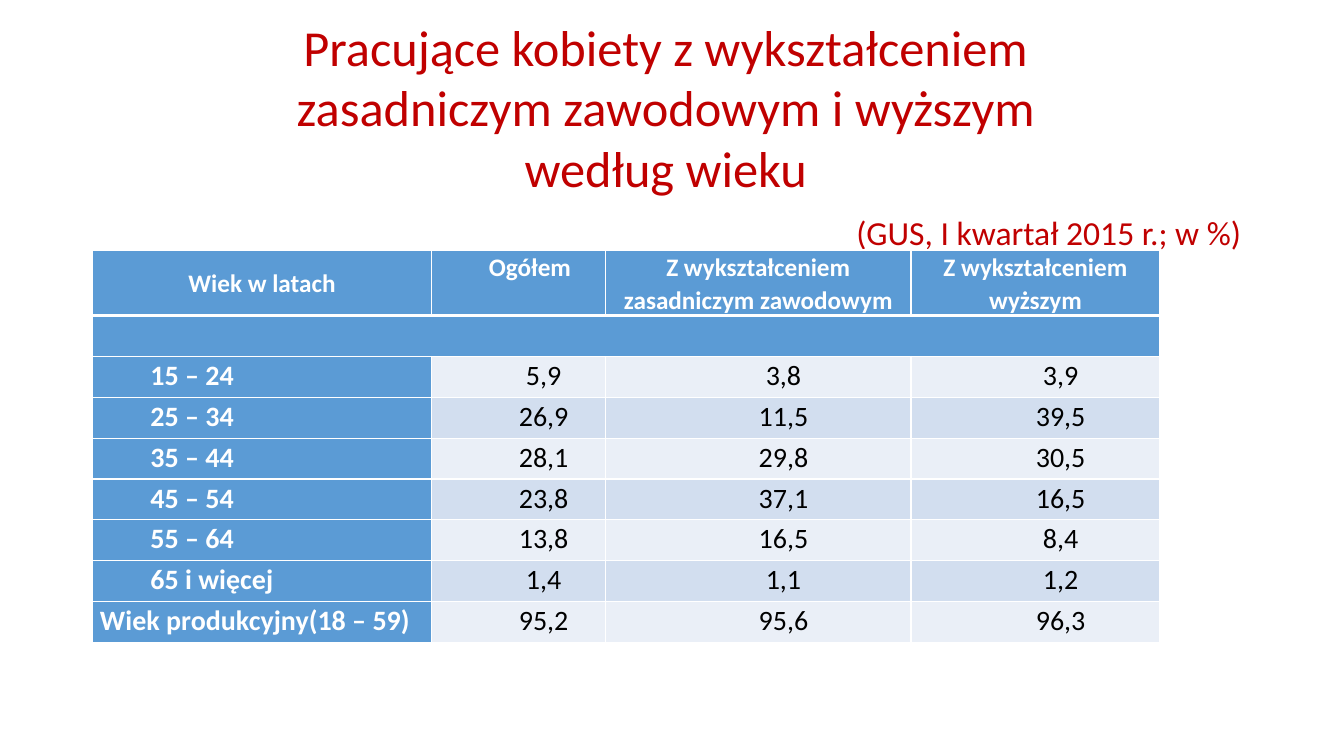
from lxml import etree
from pptx import Presentation
from pptx import util as u
from pptx.dml.color import RGBColor
from pptx.enum import text
from pptx.oxml.ns import qn

FONT = "Calibri"
RED, BLUE, WHITE, BLACK = "C00000", "5B9BD5", "FFFFFF", "000000"
BANDS = ["EAEFF7", "D2DEEF"]
CENTER, LEFT, RIGHT = text.PP_ALIGN.CENTER, text.PP_ALIGN.LEFT, text.PP_ALIGN.RIGHT

TITLE = ("Pracujące kobiety z wykształceniem\v"
         "zasadniczym zawodowym i wyższym\vwedług wieku")
SOURCE = "(GUS, I kwartał 2015 r.; w %)"
HEADERS = ["Wiek w latach", "Ogółem",
           "Z wykształceniem zasadniczym zawodowym", "Z wykształceniem wyższym"]
AGE_ROWS = [
    ["15 – 24", "5,9", "3,8", "3,9"],
    ["25 – 34", "26,9", "11,5", "39,5"],
    ["35 – 44", "28,1", "29,8", "30,5"],
    ["45 – 54", "23,8", "37,1", "16,5"],
    ["55 – 64", "13,8", "16,5", "8,4"],
    ["65 i więcej", "1,4", "1,1", "1,2"],
    ["Wiek produkcyjny(18 – 59)", "95,2", "95,6", "96,3"],
]
COLUMN_WIDTHS = [8.53, 4.39, 7.7, 6.27]
HEADER_HEIGHT, ROW_HEIGHT = 1.65, 1.03


def color(hex_string):
    return RGBColor.from_string(hex_string)


def style_paragraph(paragraph, size, hex_string, align, bold=False):
    paragraph.alignment = align
    for run in paragraph.runs:
        run.font.name = FONT
        run.font.size = u.Pt(size)
        run.font.bold = bold
        run.font.color.rgb = color(hex_string)


def set_borders(cell, top=1, bottom=1):
    properties = cell._tc.get_or_add_tcPr()
    widths = {"a:lnL": 1, "a:lnR": 1, "a:lnT": top, "a:lnB": bottom}
    for position, (tag, width) in enumerate(widths.items()):
        line = etree.Element(qn(tag), w=str(u.Pt(width)))
        fill = etree.SubElement(line, qn("a:solidFill"))
        etree.SubElement(fill, qn("a:srgbClr"), val=WHITE)
        properties.insert(position, line)


def fill_cell(cell, words, fill, size, hex_string, align, bold, indent):
    cell.fill.solid()
    cell.fill.fore_color.rgb = color(fill)
    cell.margin_left = cell.margin_right = u.Cm(0.18)
    cell.margin_top = cell.margin_bottom = 0
    paragraph = cell.text_frame.paragraphs[0]
    paragraph.text = words
    paragraph.line_spacing = 1.07
    if indent:
        paragraph._p.get_or_add_pPr().set("marL", str(u.Cm(1.27)))
    style_paragraph(paragraph, size, hex_string, align, bold)


def add_title(slide, left, top, width, height):
    text_frame = slide.shapes.add_textbox(left, top, width, height).text_frame
    text_frame.word_wrap = True
    title = text_frame.paragraphs[0]
    title.text = TITLE
    style_paragraph(title, 36, RED, CENTER)
    source = text_frame.add_paragraph()
    source.text = SOURCE
    source.space_before = u.Pt(10.5)
    style_paragraph(source, 24, RED, RIGHT)


def add_age_table(slide, left, top, width, height):
    row_count = len(AGE_ROWS) + 2
    table = slide.shapes.add_table(row_count, len(HEADERS), left, top, width, height).table
    table.horz_banding = False
    for column, column_width in zip(table.columns, COLUMN_WIDTHS):
        column.width = u.Cm(column_width)
    for index, row in enumerate(table.rows):
        row.height = u.Cm(ROW_HEIGHT if index else HEADER_HEIGHT)

    # Header row
    for index, header in enumerate(HEADERS):
        cell = table.cell(0, index)
        is_total = header == "Ogółem"
        fill_cell(cell, header, BLUE, 18, WHITE, LEFT if is_total else CENTER, True, is_total)
        cell.vertical_anchor = text.MSO_ANCHOR.TOP if is_total else text.MSO_ANCHOR.MIDDLE
        set_borders(cell, bottom=3)

    # Empty band across all columns
    table.cell(1, 0).merge(table.cell(1, len(HEADERS) - 1))
    for index in range(len(HEADERS)):
        cell = table.cell(1, index)
        fill_cell(cell, "", BLUE, 18, WHITE, LEFT, False, False)
        set_borders(cell, top=3)

    # Age groups
    for row_index, values in enumerate(AGE_ROWS):
        for index, value in enumerate(values):
            cell = table.cell(row_index + 2, index)
            if index == 0:
                is_age_group = row_index < len(AGE_ROWS) - 1
                fill_cell(cell, value, BLUE, 20, WHITE, LEFT, True, is_age_group)
            else:
                fill_cell(cell, value, BANDS[row_index % 2], 20, BLACK, CENTER, False, True)
            set_borders(cell)


def main():
    presentation = Presentation()
    presentation.slide_width, presentation.slide_height = u.Cm(33.87), u.Cm(19.05)
    slide = presentation.slides.add_slide(presentation.slide_layouts[6])
    add_title(slide, u.Cm(2.03), u.Cm(0.28), u.Cm(29.5), u.Cm(6.3))
    table_height = HEADER_HEIGHT + ROW_HEIGHT * (len(AGE_ROWS) + 1)
    add_age_table(slide, u.Cm(2.34), u.Cm(6.3), u.Cm(sum(COLUMN_WIDTHS)), u.Cm(table_height))
    presentation.save("out.pptx")


if __name__ == "__main__":
    main()
